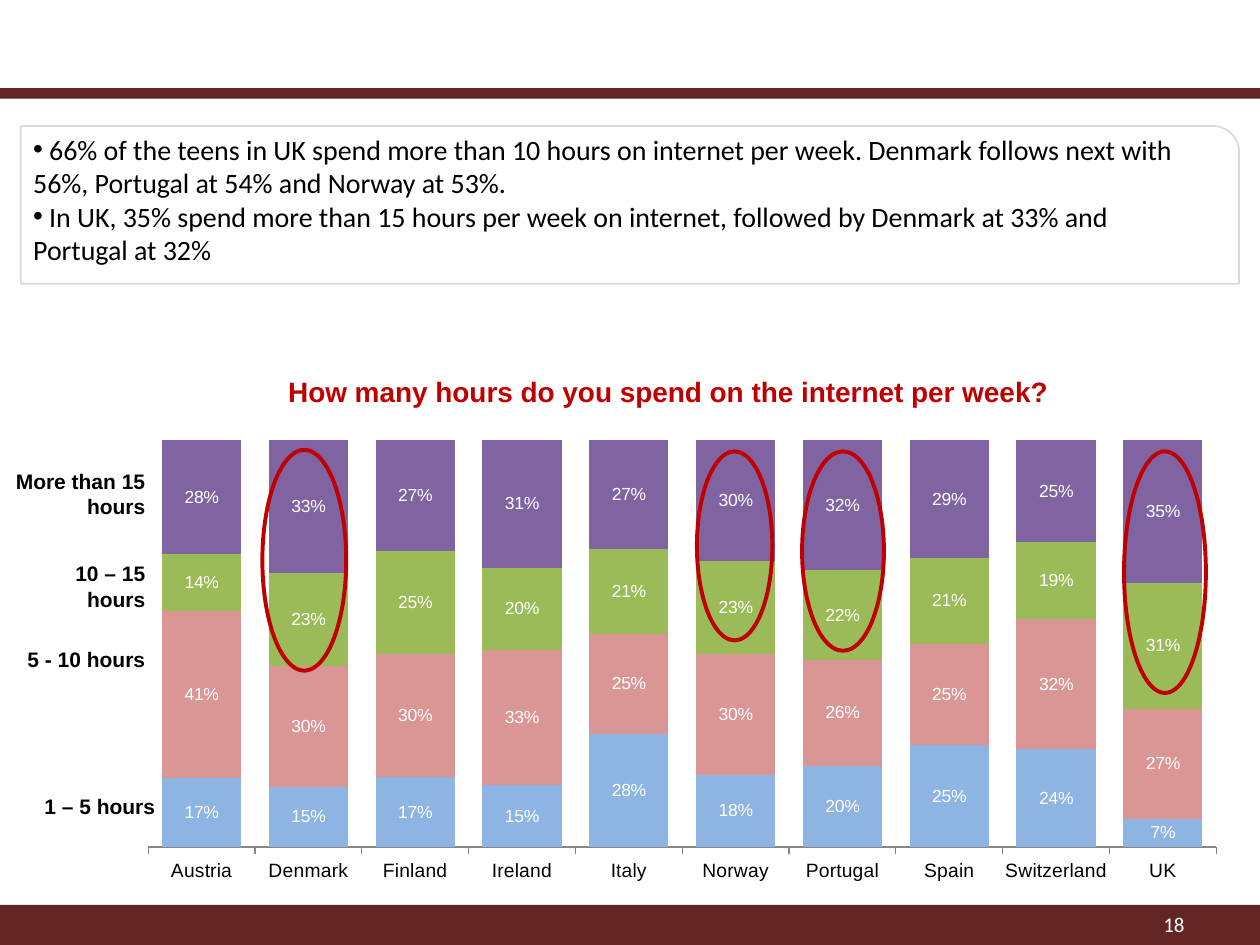
import pptx
import pptx.chart.data
import pptx.dml.color
import pptx.enum.chart
import pptx.enum.shapes
import pptx.enum.text
import pptx.oxml
import pptx.oxml.ns
import pptx.oxml.xmlchemy
import pptx.util
from pptx.util import Cm

COLOURS = {
    "band": "632523", "frame": "D9D9D9", "accent": "C00000",
    "text": "000000", "light": "FFFFFF", "axis": "868686",
    "1 – 5 hours": "8EB4E3", "5 - 10 hours": "D99694",
    "10 – 15 hours": "9BBB59", "More than 15 hours": "8064A2",
}
COUNTRIES = ["Austria", "Denmark", "Finland", "Ireland", "Italy",
             "Norway", "Portugal", "Spain", "Switzerland", "UK"]
SHARES = {
    "1 – 5 hours": [17, 15, 17, 15, 28, 18, 20, 25, 24, 7],
    "5 - 10 hours": [41, 30, 30, 33, 25, 30, 26, 25, 32, 27],
    "10 – 15 hours": [14, 23, 25, 20, 21, 23, 22, 21, 19, 31],
    "More than 15 hours": [28, 33, 27, 31, 27, 30, 32, 29, 25, 35],
}
BAND_LABELS = [  # hours, left, top, height
    ("1 – 5 hours", 0.2, 15.88, 0.76),
    ("5 - 10 hours", 0, 12.9, 0.76),
    ("10 – 15 hours", 0, 11.18, 1.27),
    ("More than 15 hours", 0, 9.32, 1.27),
]
HIGHLIGHTS = [  # left, top, width, height
    (22.66, 9.1, 1.65, 4.87),  # UK
    (5.29, 9.07, 1.69, 4.45),  # Denmark
    (16.17, 9.1, 1.65, 4.02),  # Portugal
    (14.05, 9.1, 1.52, 3.81),  # Norway
]
FINDINGS = [
    " 66% of the teens in UK spend more than 10 hours on internet per week. "
    "Denmark follows next with 56%, Portugal at 54% and Norway at 53%.",
    " In UK, 35% spend more than 15 hours per week on internet, "
    "followed by Denmark at 33% and Portugal at 32%",
]
PLOT_LAYOUT = {"x": 0.02, "y": 0.02, "w": 0.96, "h": 0.88}


def rgb(name):
    return pptx.dml.color.RGBColor.from_string(COLOURS[name])


class SlideBuilder:
    def __init__(self, slide):
        self.slide = slide

    def style_font(self, font, size, colour="text", name="Arial", bold=False):
        font.size = pptx.util.Pt(size)
        font.name = name
        font.bold = bold
        font.color.rgb = rgb(colour)

    def shape(self, kind, box, fill=None, line=None, line_width=1):
        preset = getattr(pptx.enum.shapes.MSO_SHAPE, kind)
        shape = self.slide.shapes.add_shape(preset, *map(Cm, box))
        shape.shadow.inherit = False
        if fill:
            shape.fill.solid()
            shape.fill.fore_color.rgb = rgb(fill)
        else:
            shape.fill.background()
        if line:
            shape.line.color.rgb = rgb(line)
            shape.line.width = pptx.util.Pt(line_width)
        else:
            shape.line.fill.background()

    def text(self, box, paragraphs, size, align="LEFT", anchor="TOP",
             wrap=True, bullet=None, **font):
        frame = self.slide.shapes.add_textbox(*map(Cm, box)).text_frame
        frame.word_wrap = wrap
        frame.vertical_anchor = getattr(pptx.enum.text.MSO_ANCHOR, anchor)
        frame.text = "\n".join(paragraphs)
        for paragraph in frame.paragraphs:
            paragraph.alignment = getattr(pptx.enum.text.PP_ALIGN, align)
            if bullet:
                properties = paragraph._p.get_or_add_pPr()
                for tag, key, value in (("a:buFont", "typeface", "Arial"),
                                        ("a:buChar", "char", bullet)):
                    mark = pptx.oxml.xmlchemy.OxmlElement(tag)
                    mark.set(key, value)
                    properties.append(mark)
            for run in paragraph.runs:
                self.style_font(run.font, size, **font)

    def stacked_chart(self, box, categories, shares):
        """Draw percentages as full-height stacked columns."""
        hours_data = pptx.chart.data.CategoryChartData(number_format="0%")
        hours_data.categories = categories
        for hours, percentages in shares.items():
            hours_data.add_series(hours, [p / 100 for p in percentages])
        chart = self.slide.shapes.add_chart(
            pptx.enum.chart.XL_CHART_TYPE.COLUMN_STACKED_100,
            *map(Cm, box), hours_data).chart
        chart.has_legend = False
        chart.has_title = False
        self.style_font(chart.font, 12)

        columns = chart.plots[0]
        columns.gap_width = 35
        columns.overlap = 100
        columns.vary_by_categories = False
        for series in columns.series:
            series.format.fill.solid()
            series.format.fill.fore_color.rgb = rgb(series.name)
            labels = series.data_labels
            labels.show_value = True
            labels.number_format = "0%"
            labels.number_format_is_linked = False
            self.style_font(labels.font, 10, "light")

        chart.value_axis.visible = False
        chart.value_axis.has_major_gridlines = False
        chart.value_axis.maximum_scale = 1
        countries = chart.category_axis
        countries.major_tick_mark = pptx.enum.chart.XL_TICK_MARK.OUTSIDE
        countries.format.line.color.rgb = rgb("axis")
        self.style_font(countries.tick_labels.font, 11)
        self.fix_plot_area(chart)

    def fix_plot_area(self, chart):
        """Pin the inner plot area to fractions of the chart."""
        settings = [("layoutTarget", "inner"), ("xMode", "edge"),
                    ("yMode", "edge"), *PLOT_LAYOUT.items()]
        body = "".join(f'<c:{tag} val="{value}"/>' for tag, value in settings)
        layout = pptx.oxml.parse_xml(
            f'<c:layout {pptx.oxml.ns.nsdecls("c")}>'
            f"<c:manualLayout>{body}</c:manualLayout></c:layout>")
        plot_area = chart._chartSpace.chart.plotArea
        for automatic in plot_area.findall(pptx.oxml.ns.qn("c:layout")):
            plot_area.remove(automatic)
        plot_area.insert(0, layout)


def main():
    deck = pptx.Presentation()
    deck.slide_width, deck.slide_height = Cm(25.4), Cm(19.05)
    page = SlideBuilder(deck.slides.add_slide(deck.slide_layouts[6]))

    page.shape("RECTANGLE", (0, 18.24, 25.4, 0.91), fill="band")
    page.shape("RECTANGLE", (0, 1.78, 25.4, 0.21), fill="band")
    page.stacked_chart((2.54, 8.69, 22.43, 9.32), COUNTRIES, SHARES)
    page.text((18.21, 18.11, 5.92, 1.02), ["18"], 12, "RIGHT", "MIDDLE",
              colour="light", name="Calibri")
    page.shape("ROUND_1_RECTANGLE", (0.42, 2.54, 24.56, 3.18), line="frame")
    for hours, left, top, height in BAND_LABELS:
        page.text((left, top, 3.18, height), [hours], 12, "RIGHT", "MIDDLE",
                  bold=True)
    page.text((5.56, 7.42, 16.03, 0.94),
              ["How many hours do you spend on the internet per week?"], 16,
              wrap=False, colour="accent", bold=True)
    page.text((0.42, 2.54, 24.13, 3), FINDINGS, 16, bullet="•", name="Calibri")
    for box in HIGHLIGHTS:
        page.shape("OVAL", box, line="accent", line_width=2.25)

    deck.save("out.pptx")


if __name__ == "__main__":
    main()
